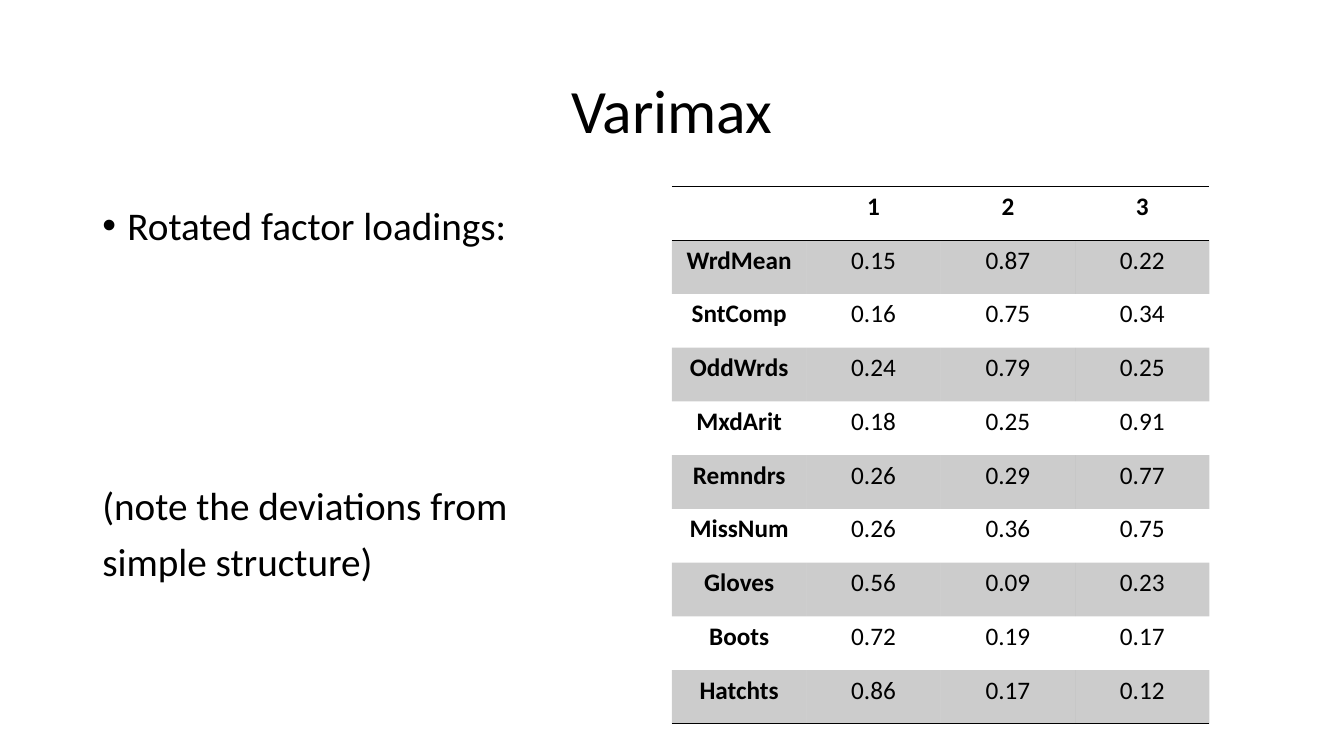
from lxml import etree
from pptx import Presentation
from pptx import util as u
from pptx.dml.color import RGBColor
from pptx.enum import text
from pptx.oxml import ns

LOADINGS = [
    ("", "1", "2", "3"),
    ("WrdMean", "0.15", "0.87", "0.22"),
    ("SntComp", "0.16", "0.75", "0.34"),
    ("OddWrds", "0.24", "0.79", "0.25"),
    ("MxdArit", "0.18", "0.25", "0.91"),
    ("Remndrs", "0.26", "0.29", "0.77"),
    ("MissNum", "0.26", "0.36", "0.75"),
    ("Gloves", "0.56", "0.09", "0.23"),
    ("Boots", "0.72", "0.19", "0.17"),
    ("Hatchts", "0.86", "0.17", "0.12"),
]
PLAIN_TABLE = "{2D5ABB26-0587-4C30-8999-92F81FD0307C}"


def color(code):
    return RGBColor.from_string(code)


def add_xml(parent, tag, **attributes):
    return etree.SubElement(parent, ns.qn(tag), attributes)


def write(para, words, size, font="Calibri", ink="000000", bold=False,
          align=text.PP_ALIGN.LEFT, spacing=1.0, before=0, bullet=None):
    para.alignment = align
    para.line_spacing = spacing
    para.space_before = u.Pt(before)
    if bullet:
        layout = para._p.get_or_add_pPr()
        layout.set("marL", str(u.Pt(18)))
        layout.set("indent", str(u.Pt(-18)))
        add_xml(layout, "a:buFont", typeface="Arial")
        add_xml(layout, "a:buChar", char=bullet)
    if words:
        span = para.add_run()
        span.text = words
        span.font.name = font
        span.font.size = u.Pt(size)
        span.font.bold = bold
        span.font.color.rgb = color(ink)


class SlideBuilder:
    ink = "000000"
    band_alpha = 20
    rule_width = 1

    def __init__(self, page):
        self.page = page

    def text_box(self, left, top, width, height, lines,
                 anchor=text.MSO_ANCHOR.TOP):
        box = self.page.shapes.add_textbox(*map(u.Pt, (left, top, width, height)))
        frame = box.text_frame
        frame.word_wrap = True
        frame.vertical_anchor = anchor
        for index, (words, style) in enumerate(lines):
            para = frame.add_paragraph() if index else frame.paragraphs[0]
            write(para, words, ink=self.ink, **style)

    def rule(self, cell, side):
        line = add_xml(cell._tc.get_or_add_tcPr(), side, w=str(u.Pt(self.rule_width)))
        add_xml(add_xml(line, "a:solidFill"), "a:srgbClr", val=self.ink)

    def band(self, cell):
        cell.fill.solid()
        cell.fill.fore_color.rgb = color(self.ink)
        shade = cell._tc.tcPr.find(".//" + ns.qn("a:solidFill") + "[last()]")
        shade = cell._tc.tcPr.find(ns.qn("a:solidFill")) if shade is None else shade
        add_xml(cell._tc.tcPr.find(ns.qn("a:solidFill"))[0], "a:alpha",
                val=str(self.band_alpha * 1000))

    def table(self, left, top, width, height, rows):
        frame = self.page.shapes.add_table(
            len(rows), len(rows[0]), *map(u.Pt, (left, top, width, height)))
        grid = frame.table
        grid.horz_banding = False
        grid.first_row = False
        grid._tbl.tblPr.find(ns.qn("a:tableStyleId")).text = PLAIN_TABLE
        for row, values in enumerate(rows):
            grid.rows[row].height = u.Pt(height / len(rows))
            for column, value in enumerate(values):
                cell = grid.cell(row, column)
                write(cell.text_frame.paragraphs[0], value, 18, ink=self.ink,
                      bold=row == 0 or column == 0, align=text.PP_ALIGN.CENTER)
                # Rules above and below the header, and under the last row
                if row == 0:
                    self.rule(cell, "a:lnT")
                if row in (0, len(rows) - 1):
                    self.rule(cell, "a:lnB")
                # Shade every other row
                if row % 2:
                    self.band(cell)
                else:
                    cell.fill.background()


def main():
    deck = Presentation()
    deck.slide_width, deck.slide_height = u.Pt(960), u.Pt(540)
    slide = SlideBuilder(deck.slides.add_slide(deck.slide_layouts[6]))

    # Title
    slide.text_box(66, 28.75, 828, 104.4, [
        ("Varimax", dict(size=44, align=text.PP_ALIGN.CENTER, spacing=0.9)),
    ], anchor=text.MSO_ANCHOR.MIDDLE)

    # Heading and note, set apart by paragraph spacing
    body = dict(size=28, spacing=0.9)
    slide.text_box(66, 143.75, 828, 342.6, [
        ("Rotated factor loadings:", dict(body, before=10, bullet="•")),
        ("(note the deviations from", dict(body, before=170)),
        ("simple structure)", dict(body, before=10)),
    ])

    # Factor loadings
    slide.table(480, 133.2, 384, 384, LOADINGS)

    deck.save("out.pptx")


if __name__ == "__main__":
    main()
